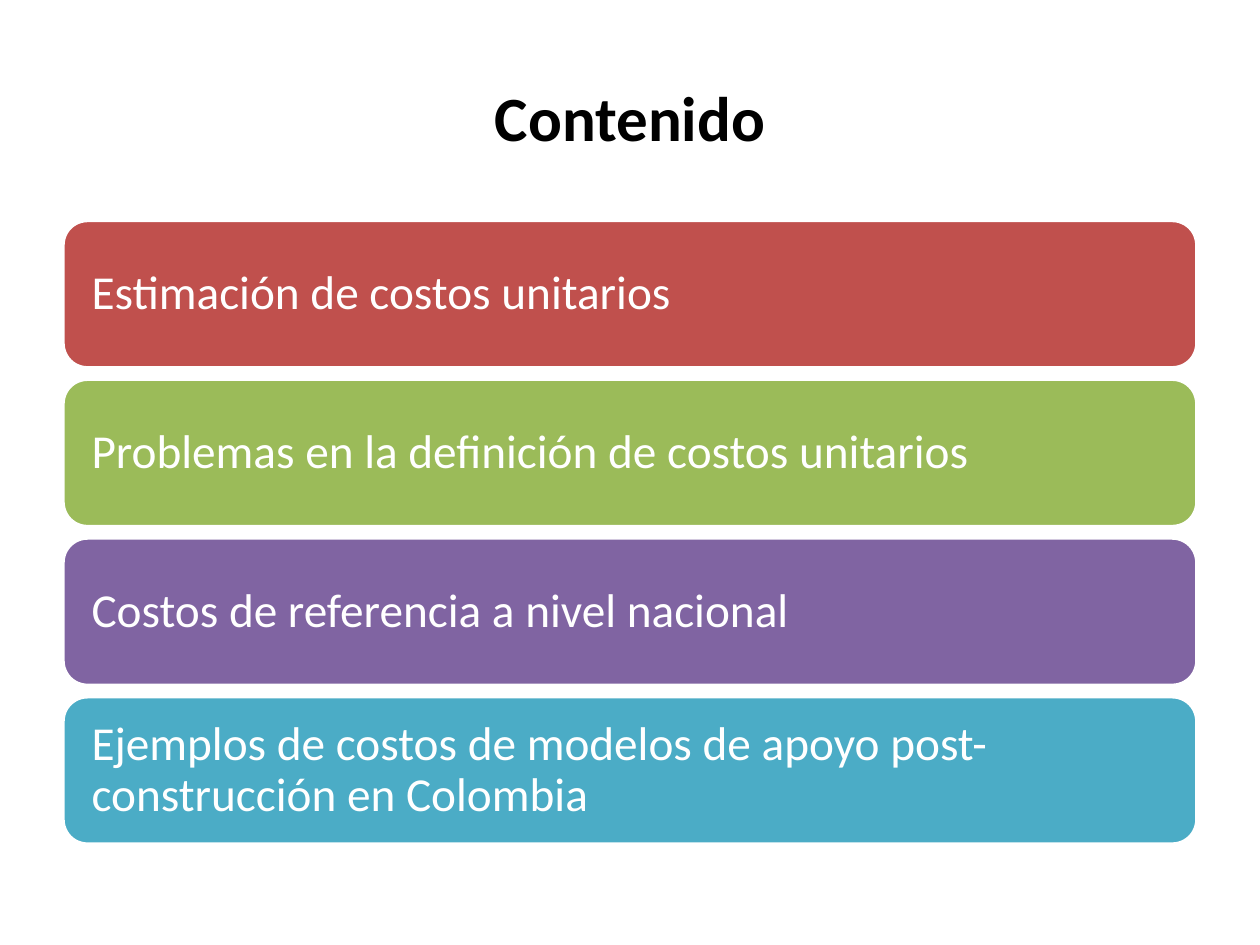
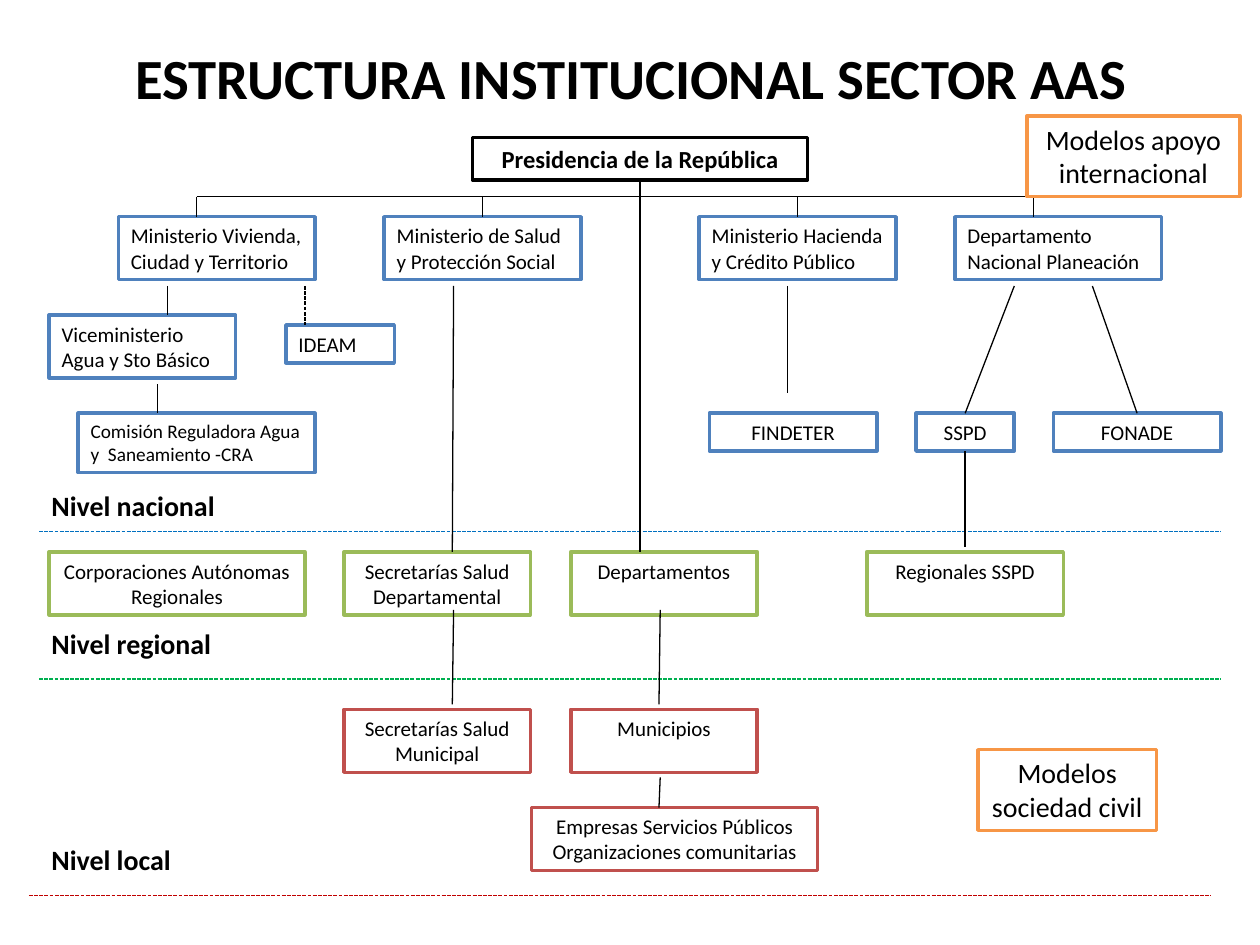
from dataclasses import dataclass

from lxml.etree import SubElement
from pptx import Presentation
from pptx.dml.color import RGBColor
from pptx.enum.dml import MSO_LINE_DASH_STYLE as Dash
from pptx.enum.shapes import MSO_CONNECTOR as Connector, MSO_SHAPE as Shape
from pptx.enum.text import MSO_ANCHOR as Anchor, PP_ALIGN as Align
from pptx.oxml.ns import qn
from pptx.util import Inches, Pt


@dataclass(frozen=True)
class Theme:
    font: str = "Calibri"
    black: str = "000000"
    white: str = "FFFFFF"
    blue: str = "4F81BD"
    red: str = "C0504D"
    green: str = "9BBB59"
    purple: str = "8064A2"
    aqua: str = "4BACC6"
    orange: str = "F79646"
    national_rule: str = "0070C0"
    regional_rule: str = "00B050"
    local_rule: str = "C00000"
    agenda_size: float = 27
    node_size: float = 12
    small_size: float = 11
    root_size: float = 14
    label_size: float = 16
    border: float = 2
    rule: float = 0.75


THEME = Theme()


@dataclass(frozen=True)
class Box:
    left: float
    top: float
    width: float
    height: float

    def inner(self, left, top, width, height):
        """Box placed relative to this one."""
        return Box(self.left + left, self.top + top, width, height)

    def lengths(self):
        return [Inches(value) for value in (self.left, self.top, self.width, self.height)]


@dataclass(frozen=True)
class Level:
    label: str
    top: float
    height: float
    label_rise: float  # from the dashed rule up to the top of the label
    rule_color: str
    node_color: str
    align: Align
    rows: tuple  # (top, height, ((text, left, width), ...))
    rule_shift: float = 0


LEVELS = (
    Level("Nivel nacional", 0, 3.13, 0.39, THEME.national_rule, THEME.blue, Align.LEFT, (
        (0.63, 0.5, (("Ministerio Vivienda,\nCiudad y Territorio", 0.63, 1.56),
                     ("Ministerio de Salud y Protección Social", 2.74, 1.56),
                     ("Ministerio Hacienda y Crédito Público", 5.24, 1.56),
                     ("Departamento Nacional Planeación", 7.27, 1.64))),
        (1.41, 0.5, (("Viceministerio Agua y Sto Básico", 0.08, 1.48),)),
        (1.49, 0.3, (("IDEAM", 1.96, 0.86),)),
        (2.19, 0.47, (("Comisión Reguladora Agua y  Saneamiento -CRA", 0.31, 1.88),)),
        (2.19, 0.3, (("FINDETER", 5.32, 1.33), ("SSPD", 6.96, 0.78), ("FONADE", 8.05, 1.33))),
    )),
    Level("Nivel regional", 3.13, 1.17, 0.47, THEME.regional_rule, THEME.green, Align.CENTER, (
        (0.16, 0.5, (("Corporaciones Autónomas Regionales", 0.08, 2.03),
                     ("Secretarías Salud Departamental", 2.42, 1.48),
                     ("Departamentos", 4.22, 1.48),
                     ("Regionales SSPD", 6.57, 1.56))),
    )),
    Level("Nivel local", 4.3, 1.72, 0.47, THEME.local_rule, THEME.red, Align.CENTER, (
        (0.24, 0.5, (("Secretarías Salud Municipal", 2.42, 1.48), ("Municipios", 4.22, 1.48))),
        (1.02, 0.5, (("Empresas Servicios Públicos\nOrganizaciones comunitarias", 3.91, 2.27),)),
    ), -0.08),
)
CENTERED = {"FINDETER", "SSPD", "FONADE"}
SMALL = {"Comisión Reguladora Agua y  Saneamiento -CRA"}
PRESIDENCY = "Presidencia de la República"

# Each end is a point in the diagram, or a node with its connection site
LINKS = (
    ((1.25, 0.47), (7.89, 0.47)),
    ((1.25, 0.47), (1.25, 0.63)),
    ((3.52, 0.47), ("Ministerio de Salud y Protección Social", 0)),
    ((6.02, 0.47), ("Ministerio Hacienda y Crédito Público", 0)),
    ((7.89, 0.47), (7.89, 0.63)),
    ((1.02, 1.18), (1.02, 1.41)),
    ((0.94, 1.96), (0.94, 2.19)),
    ((3.29, 1.18), (3.28, 3.29)),
    ((PRESIDENCY, 2), (4.77, 3.29)),
    ((7.74, 1.18), ("SSPD", 0)),
    ((8.36, 1.18), ("FONADE", 0)),
    ((3.29, 3.75), (3.28, 4.5)),
    ((4.93, 3.75), (4.92, 4.5)),
    ((4.93, 5.08), (4.92, 5.32)),
    (("SSPD", 2), (7.35, 3.25)),
    ((5.94, 1.18), (5.94, 2.03)),
)
DASHED_LINK = ((2.11, 1.18), (2.11, 1.49))


def rgb(color):
    return RGBColor.from_string(color)


def write(shape, text, size, color=THEME.black, bold=False, align=Align.LEFT, anchor=Anchor.TOP):
    frame = shape.text_frame
    frame.text = text
    frame.word_wrap = True
    frame.vertical_anchor = anchor
    for paragraph in frame.paragraphs:
        paragraph.alignment = align
        for run in paragraph.runs:
            run.font.name = THEME.font
            run.font.size = Pt(size)
            run.font.bold = bold
            run.font.color.rgb = rgb(color)


def add_box(slide, kind, box, fill, border):
    shape = slide.shapes.add_shape(kind, *box.lengths())
    shape.shadow.inherit = False
    shape.fill.solid()
    shape.fill.fore_color.rgb = rgb(fill)
    shape.line.color.rgb = rgb(border)
    shape.line.width = Pt(THEME.border)
    return shape


def add_node(slide, box, text, border, size=THEME.node_size, **style):
    node = add_box(slide, Shape.RECTANGLE, box, THEME.white, border)
    write(node, text, size, **style)
    return node


def add_line(slide, start, end, color=THEME.black, dashed=False):
    line = slide.shapes.add_connector(
        Connector.STRAIGHT, *[Inches(value) for value in (*start, *end)])
    line.line.color.rgb = rgb(color)
    line.line.width = Pt(THEME.rule)
    if dashed:
        line.line.dash_style = Dash.SQUARE_DOT
    SubElement(line._element.spPr, qn("a:effectLst"))
    return line


def add_titled_slide(presentation, title, box, size):
    slide = presentation.slides.add_slide(presentation.slide_layouts[5])
    placeholder = slide.shapes.title
    placeholder.left, placeholder.top, placeholder.width, placeholder.height = box.lengths()
    write(placeholder, title, size, bold=True, align=Align.CENTER, anchor=Anchor.MIDDLE)
    return slide


def draw_agenda(slide, box, items):
    """Stack of equal rounded bars."""
    height, gap, inset = 1.17, 0.09, Inches(0.17)
    for index, (text, color) in enumerate(items):
        bar_box = box.inner(0, index * (height + gap), box.width, height)
        bar = add_box(slide, Shape.ROUNDED_RECTANGLE, bar_box, color, THEME.white)
        write(bar, text, THEME.agenda_size, THEME.white, anchor=Anchor.MIDDLE)
        bar.text_frame.margin_left = bar.text_frame.margin_right = inset
        bar.text_frame.paragraphs[0].line_spacing = 0.9


def draw_level(slide, box, level):
    """Nodes of one level above its dashed rule; returns the nodes by text."""
    nodes = {}
    for top, height, entries in level.rows:
        for text, left, width in entries:
            nodes[text] = add_node(
                slide, box.inner(left, top, width, height), text, level.node_color,
                THEME.small_size if text in SMALL else THEME.node_size,
                align=Align.CENTER if text in CENTERED else level.align)
    left, bottom = box.left + level.rule_shift, box.top + box.height
    add_line(slide, (left, bottom), (left + box.width, bottom), level.rule_color, dashed=True)
    label_box = box.inner(0, box.height - level.label_rise, 2.58, 0.37)
    label = slide.shapes.add_textbox(*label_box.lengths())
    write(label, level.label, THEME.label_size, bold=True)
    return nodes


def draw_links(slide, box, nodes):
    def place(end):
        if end[0] in nodes:
            return 0, 0
        return box.left + end[0], box.top + end[1]

    for start, end in LINKS:
        line = add_line(slide, place(start), place(end))
        if start[0] in nodes:
            line.begin_connect(nodes[start[0]], start[1])
        if end[0] in nodes:
            line.end_connect(nodes[end[0]], end[1])
    add_line(slide, *map(place, DASHED_LINK), dashed=True)


def draw_structure(slide, box):
    """Organisation chart: root, three levels, links and support models."""
    nodes = {PRESIDENCY: add_node(
        slide, box.inner(3.44, 0, 2.66, 0.34), PRESIDENCY, THEME.black,
        THEME.root_size, bold=True, align=Align.CENTER)}
    for level in LEVELS:
        nodes.update(draw_level(slide, box.inner(0, level.top, box.width, level.height), level))
    draw_links(slide, box, nodes)
    for text, left, top, width in (("Modelos sociedad civil", 7.45, 4.86, 1.42),
                                   ("Modelos apoyo internacional", 7.84, -0.17, 1.69)):
        add_node(slide, box.inner(left, top, width, 0.64), text, THEME.orange,
                 THEME.label_size, align=Align.CENTER)


def main():
    presentation = Presentation()
    presentation.slide_width, presentation.slide_height = Inches(10), Inches(7.5)

    agenda = add_titled_slide(presentation, "Contenido", Box(0.5, 0.3, 9, 1.25), 36)
    draw_agenda(agenda, Box(0.5, 1.75, 9, 4.95), (
        ("Estimación de costos unitarios", THEME.red),
        ("Problemas en la definición de costos unitarios", THEME.green),
        ("Costos de referencia a nivel nacional", THEME.purple),
        ("Ejemplos de costos de modelos de apoyo post-construcción en Colombia", THEME.aqua),
    ))

    structure = add_titled_slide(presentation, "ESTRUCTURA INSTITUCIONAL SECTOR AAS",
                                 Box(0.51, 0.29, 9, 0.64), 32.4)
    draw_structure(structure, Box(0.31, 1.09, 9.38, 6.02))
    presentation.save("out.pptx")


if __name__ == "__main__":
    main()
